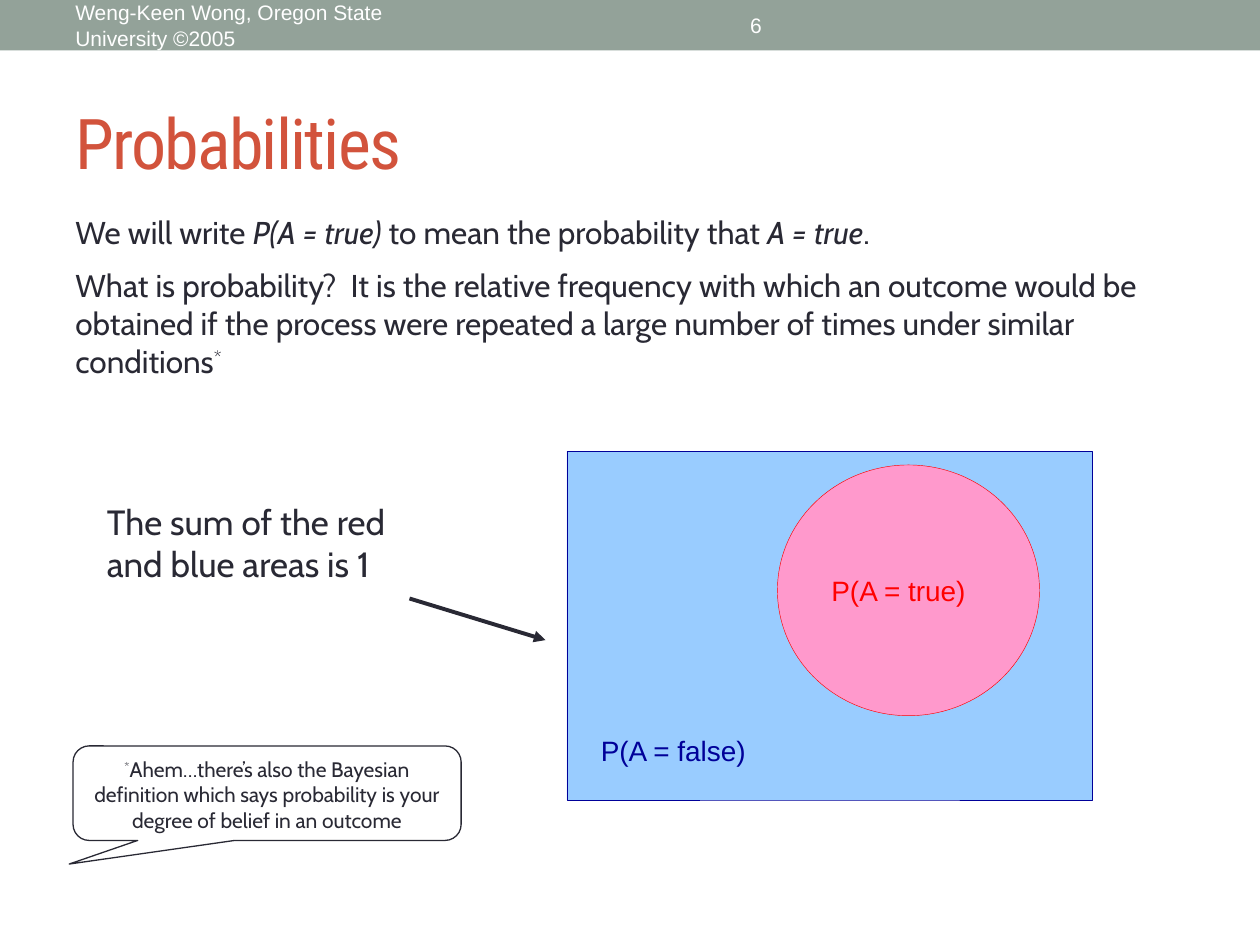
from lxml.etree import SubElement
from pptx import Presentation
from pptx.dml.color import RGBColor
from pptx.enum.shapes import MSO_CONNECTOR as Conn, MSO_SHAPE as Shape
from pptx.enum.text import MSO_ANCHOR as Anchor, PP_ALIGN as Align
from pptx.oxml.ns import qn
from pptx.util import Inches, Pt

WHITE = RGBColor(0xFF, 0xFF, 0xFF)
SAGE = RGBColor(0x93, 0xA2, 0x99)
RUST = RGBColor(0xD2, 0x53, 0x3C)
INK = RGBColor(0x29, 0x29, 0x34)
SKY = RGBColor(0x99, 0xCC, 0xFF)
NAVY = RGBColor(0x00, 0x00, 0x99)
PINK = RGBColor(0xFF, 0x99, 0xCC)
RED = RGBColor(0xFF, 0x00, 0x00)

# Content: each paragraph is a list of (text, style) runs
FOOTER = [[("Weng-Keen Wong, Oregon State University ©2005", "")]]
NUMBER = [[("6", "")]]
TITLE = [[("Probabilities", "tight")]]
BODY = [
    [("We will write ", ""), ("P(A = true)", "italic"),
     (" to mean the probability that ", ""), ("A = true", "italic"), (".", "")],
    [("What is probability?  It is the relative frequency with which an outcome "
      "would be obtained if the process were repeated a large number of times "
      "under similar conditions", ""), ("*", "super")],
]
SUM = [[("The sum of the red and blue areas is 1", "")]]
FALSE = [[("P(A = false)", "")]]
TRUE = [[("P(A = true)", "")]]
ASIDE = [[("*", "super"),
          ("Ahem…there’s also the Bayesian definition which says probability "
           "is your degree of belief in an outcome", "")]]

# Text boxes: paragraphs, place, font, size, colour, anchor, alignment
BOXES = [
    (FOOTER, (0.5, 0.02, 3.17, 0.36), "Arial", 12, WHITE, Anchor.MIDDLE, Align.LEFT),
    (NUMBER, (3.75, 0.02, 4.5, 0.36), "Arial", 12, WHITE, Anchor.MIDDLE, Align.CENTER),
    (TITLE, (0.5, 0.58, 9, 1.08), "Roboto Condensed", 40, RUST, Anchor.MIDDLE, Align.LEFT),
    (BODY, (0.5, 1.64, 9.08, 1.46), "Cabin", 18, INK, Anchor.TOP, Align.LEFT),
    (SUM, (0.75, 3.92, 2.84, 0.77), "Cabin", 20, INK, Anchor.TOP, Align.LEFT),
    (FALSE, (4.67, 5.77, 1.37, 0.37), "Arial", 16, NAVY, Anchor.TOP, Align.LEFT),
    (TRUE, (6.5, 4.5, 1.42, 0.37), "Arial", 16, RED, Anchor.TOP, Align.LEFT),
]


def write(shape, paras, font, size, color, anchor, align):
    frame = shape.text_frame
    frame.word_wrap = True
    frame.vertical_anchor = anchor
    for i, runs in enumerate(paras):
        para = frame.add_paragraph() if i else frame.paragraphs[0]
        para.alignment = align
        if i:
            para.space_before = Pt(size / 2)
        for text, style in runs:
            run = para.add_run()
            run.text = text
            run.font.name = font
            run.font.size = Pt(size)
            run.font.color.rgb = color
            props = run._r.get_or_add_rPr()
            if style == "italic":
                run.font.italic = True
            elif style == "super":
                props.set("baseline", "30000")
            elif style == "tight":
                props.set("spc", "-100")


def draw(kind, place, fill=None, line=None, width=0):
    shape = slide.shapes.add_shape(kind, *map(Inches, place))
    shape.shadow.inherit = False
    if fill is None:
        shape.fill.background()
    else:
        shape.fill.solid()
        shape.fill.fore_color.rgb = fill
    if line is None:
        shape.line.fill.background()
    else:
        shape.line.color.rgb = line
        shape.line.width = Pt(width)
    return shape


deck = Presentation()
deck.slide_width, deck.slide_height = Inches(10), Inches(7.5)
slide = deck.slides.add_slide(deck.slide_layouts[6])

# Top band and area diagram
draw(Shape.RECTANGLE, (0, 0, 10, 0.4), SAGE)
draw(Shape.RECTANGLE, (4.5, 3.58, 4.17, 2.77), SKY, NAVY, 0.25)
draw(Shape.OVAL, (6.17, 3.69, 2.08, 1.99), PINK, RED, 0.25)

# Text
for paras, place, *look in BOXES:
    write(slide.shapes.add_textbox(*map(Inches, place)), paras, *look)

# Arrow to the diagram
arrow = slide.shapes.add_connector(Conn.STRAIGHT, *map(Inches, (3.25, 4.75, 4.33, 5.08)))
arrow.line.color.rgb = INK
arrow.line.width = Pt(2.25)
SubElement(arrow.line._get_or_add_ln(), qn("a:tailEnd"), type="triangle")
SubElement(arrow._element.spPr, qn("a:effectLst"))

# Callout
aside = draw(Shape.ROUNDED_RECTANGULAR_CALLOUT, (0.58, 5.92, 3.08, 0.75), None, INK, 0.75)
for i, value in enumerate((-0.51, 0.75, 0.17)):
    aside.adjustments[i] = value
write(aside, ASIDE, "Cabin", 12, INK, Anchor.TOP, Align.CENTER)

deck.save("out.pptx")
